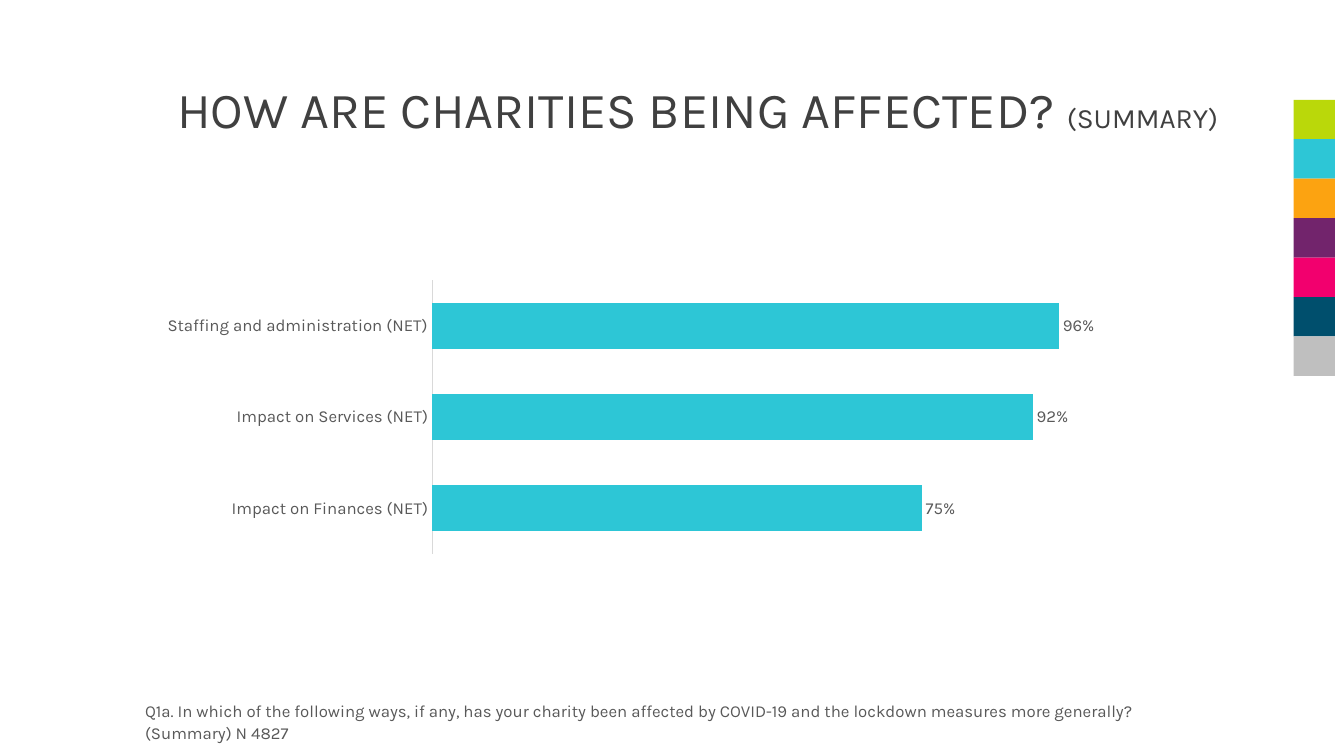
from lxml.etree import SubElement
from pptx import Presentation
from pptx.chart.data import CategoryChartData
from pptx.dml.color import RGBColor
from pptx.enum.chart import XL_CHART_TYPE, XL_LABEL_POSITION, XL_TICK_MARK
from pptx.enum.shapes import MSO_SHAPE
from pptx.enum.text import MSO_ANCHOR, MSO_AUTO_SIZE, PP_ALIGN
from pptx.oxml.ns import qn
from pptx.util import Inches, Pt

COLOURS = {
    "lime": "BAD80A", "cyan": "2DC6D6", "orange": "FCA311", "purple": "72246C",
    "pink": "F2006E", "navy": "004F6D", "grey": "BFBFBF",
    "heading": "404040", "body": "595959", "axis": "D9D9D9",
}
PALETTE = ("lime", "cyan", "orange", "purple", "pink", "navy", "grey")
FONT = "Karla"
EFFECTS = {
    "Impact on Finances (NET)": 0.75,
    "Impact on Services (NET)": 0.92,
    "Staffing and administration (NET)": 0.96,
}
PLOT_SHARE = {"x": 0.282, "y": 0.075, "w": 0.705, "h": 0.92}


def rgb(name):
    return RGBColor.from_string(COLOURS[name])


def style(font, size, colour):
    font.name, font.size, font.bold = FONT, Pt(size), False
    font.color.rgb = rgb(colour)


def add_palette(slide, left, top, width, height):
    step = height / len(PALETTE)
    for row, colour in enumerate(PALETTE):
        swatch = slide.shapes.add_shape(
            MSO_SHAPE.RECTANGLE, Inches(left), Inches(top + row * step),
            Inches(width), Inches(step))
        swatch.shadow.inherit = False
        swatch.fill.solid()
        swatch.fill.fore_color.rgb = rgb(colour)
        swatch.line.fill.background()


def add_heading(slide, left, top, width, height):
    heading = slide.shapes.title
    heading.left, heading.top = Inches(left), Inches(top)
    heading.width, heading.height = Inches(width), Inches(height)
    frame = heading.text_frame
    frame.auto_size = MSO_AUTO_SIZE.NONE
    frame.word_wrap = True
    frame.vertical_anchor = MSO_ANCHOR.MIDDLE
    line = frame.paragraphs[0]
    line.alignment, line.line_spacing = PP_ALIGN.CENTER, 0.9
    for words, size in (("HOW ARE CHARITIES BEING AFFECTED? ", 36), ("(SUMMARY)", 20)):
        part = line.add_run()
        part.text = words
        style(part.font, size, "heading")


def set_plot_area(chart):
    """Fix the inner plot area as shares of the chart's box."""
    plot_area = chart.element.find(".//" + qn("c:plotArea"))
    for old_layout in plot_area.findall(qn("c:layout")):
        plot_area.remove(old_layout)
    layout = SubElement(plot_area, qn("c:layout"))
    plot_area.insert(0, layout)
    manual = SubElement(layout, qn("c:manualLayout"))
    settings = {"layoutTarget": "inner", "xMode": "edge", "yMode": "edge", **PLOT_SHARE}
    for tag, value in settings.items():
        SubElement(manual, qn("c:" + tag)).set("val", str(value))


def add_effects_chart(slide, left, top, width, height):
    effects = CategoryChartData(number_format="0%")
    effects.categories = list(EFFECTS)
    effects.add_series("Series 1", list(EFFECTS.values()))
    chart = slide.shapes.add_chart(
        XL_CHART_TYPE.BAR_CLUSTERED, Inches(left), Inches(top),
        Inches(width), Inches(height), effects).chart
    chart.has_legend = chart.has_title = False
    style(chart.font, 12, "body")
    set_plot_area(chart)

    # Axes
    effect_axis, share_axis = chart.category_axis, chart.value_axis
    effect_axis.major_tick_mark = effect_axis.minor_tick_mark = XL_TICK_MARK.NONE
    effect_axis.format.line.color.rgb = rgb("axis")
    effect_axis.format.line.width = Pt(0.75)
    style(effect_axis.tick_labels.font, 12, "body")
    share_axis.minimum_scale, share_axis.maximum_scale = 0, 1.2
    share_axis.has_major_gridlines = False
    share_axis.visible = False

    # Bars and their labels
    bars = chart.plots[0]
    bars.gap_width = 100
    bars.vary_by_categories = False
    fill = bars.series[0].format.fill
    fill.solid()
    fill.fore_color.rgb = rgb("cyan")
    bars.has_data_labels = True
    labels = bars.data_labels
    labels.show_value = True
    labels.number_format, labels.number_format_is_linked = "0%", False
    labels.position = XL_LABEL_POSITION.OUTSIDE_END
    style(labels.font, 12, "body")


def add_question(slide, left, top, width, height):
    question = slide.shapes.add_textbox(
        Inches(left), Inches(top), Inches(width), Inches(height))
    frame = question.text_frame
    frame.word_wrap = True
    frame.text = (
        "Q1a. In which of the following ways, if any, has your charity been affected by "
        "COVID-19 and the lockdown measures more generally? (Summary) N 4827")
    line = frame.paragraphs[0]
    line.line_spacing, line.space_after = 1.07, Pt(8)
    style(line.runs[0].font, 12, "body")


def main():
    deck = Presentation()
    deck.slide_width, deck.slide_height = Inches(13.33), Inches(7.5)
    slide = deck.slides.add_slide(deck.slide_layouts[5])
    add_palette(slide, 12.83, 0.99, 0.41, 2.74)
    add_heading(slide, 1.38, 0.39, 11.08, 1.45)
    add_effects_chart(slide, 1.18, 2.56, 11.02, 2.95)
    add_question(slide, 1.34, 6.89, 10.63, 0.39)
    deck.save("out.pptx")


if __name__ == "__main__":
    main()
